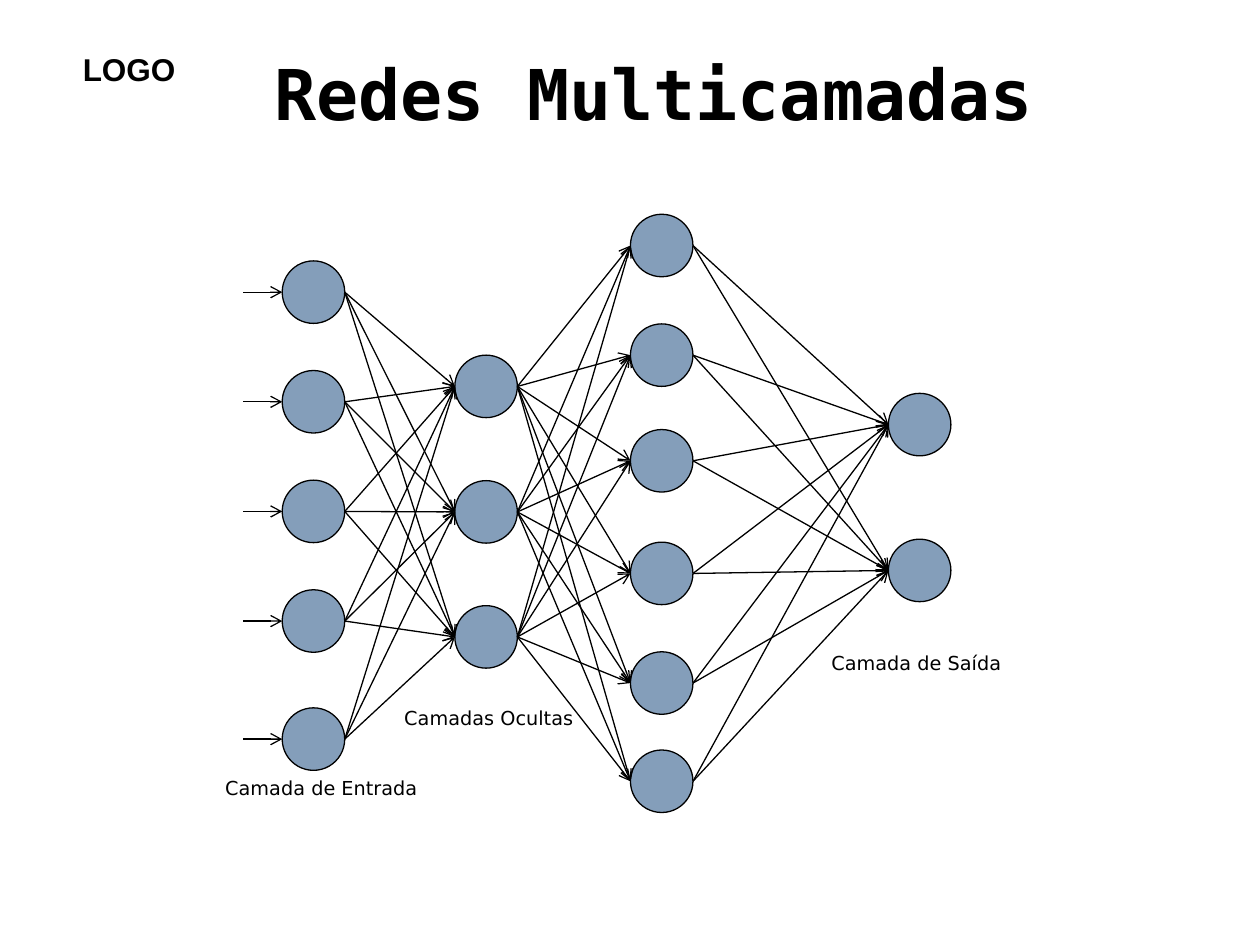
from itertools import product
from lxml.etree import SubElement
from pptx import Presentation
from pptx.dml.color import RGBColor as RGB
from pptx.enum.shapes import MSO_CONNECTOR as Link, MSO_SHAPE as Form
from pptx.enum.text import MSO_ANCHOR as Anchor, PP_ALIGN as Align
from pptx.oxml.ns import qn
from pptx.util import Cm, Pt

# Content: layers as (centre x, centre y of each neuron), in cm
TITLE = "Redes Multicamadas"
LAYERS = [
    (6.32, [5.89, 8.1, 10.31, 12.52, 14.9]),
    (9.8, [7.79, 10.32, 12.84]),
    (13.34, [4.95, 7.16, 9.29, 11.56, 13.77, 15.75]),
    (18.54, [8.56, 11.5]),
]
LABELS = [
    ("Camada de Entrada", 4.29, 15.52),
    ("Camadas Ocultas", 7.9, 14.12),
    ("Camada de Saída", 16.51, 13.0),
]
COLORS = {"ink": "000000", "node": "849EBA"}
FONTS = {
    "title": {"name": "DejaVu Sans Mono", "size": Pt(40), "bold": True},
    "logo": {"name": "Arial", "size": Pt(18), "bold": True},
    "label": {"name": "DejaVu Sans", "size": Pt(11), "bold": False},
}
SIZE = 1.26   # neuron diameter
ENTRY = 4.9   # where the input arrows start
INK = RGB.from_string(COLORS["ink"])


def place(shape, *box):
    for key, val in zip(("left", "top", "width", "height"), box):
        setattr(shape, key, Cm(val))


def write(shape, text, style, wrap=True):
    frame = shape.text_frame
    frame.word_wrap = wrap
    frame.text = text
    par = frame.paragraphs[0]
    par.alignment = Align.LEFT
    for key, val in FONTS[style].items():
        setattr(par.font, key, val)
    par.font.color.rgb = INK


def label(text, style, *box, wrap=True):
    shape = slide.shapes.add_textbox(*map(Cm, box))
    write(shape, text, style, wrap)


def trim(line):
    line.color.rgb = INK
    line.width = Pt(0.75)


def arrow(x1, y1, x2, y2):
    link = slide.shapes.add_connector(Link.STRAIGHT, *map(Cm, (x1, y1, x2, y2)))
    trim(link.line)
    SubElement(link.line._get_or_add_ln(), qn("a:tailEnd"), type="arrow")
    SubElement(link._element.spPr, qn("a:effectLst"))


def neuron(x, y):
    node = slide.shapes.add_shape(
        Form.OVAL, *map(Cm, (x - SIZE / 2, y - SIZE / 2, SIZE, SIZE)))
    node.shadow.inherit = False
    node.fill.solid()
    node.fill.fore_color.rgb = RGB.from_string(COLORS["node"])
    trim(node.line)


deck = Presentation()
deck.slide_width, deck.slide_height = Cm(25.4), Cm(19.05)
slide = deck.slides.add_slide(deck.slide_layouts[5])

# Header
title = slide.shapes.title
place(title, 5.28, 0.64, 18.85, 2.46)
write(title, TITLE, "title")
title.text_frame.vertical_anchor = Anchor.MIDDLE
label("LOGO", "logo", 1.42, 0.89, 2.39, 1.02, wrap=False)

# Neurons
for x, rows in LAYERS:
    for y in rows:
        neuron(x, y)

# Input arrows, then every neuron to each one in the next layer
x, rows = LAYERS[0]
for y in rows:
    arrow(ENTRY, y, x - SIZE / 2, y)
for (x1, rows1), (x2, rows2) in zip(LAYERS, LAYERS[1:]):
    for y1, y2 in product(rows1, rows2):
        arrow(x1 + SIZE / 2, y1, x2 - SIZE / 2, y2)

# Layer names
for text, x, y in LABELS:
    label(text, "label", x, y, 4.4, 0.74)

deck.save("out.pptx")
